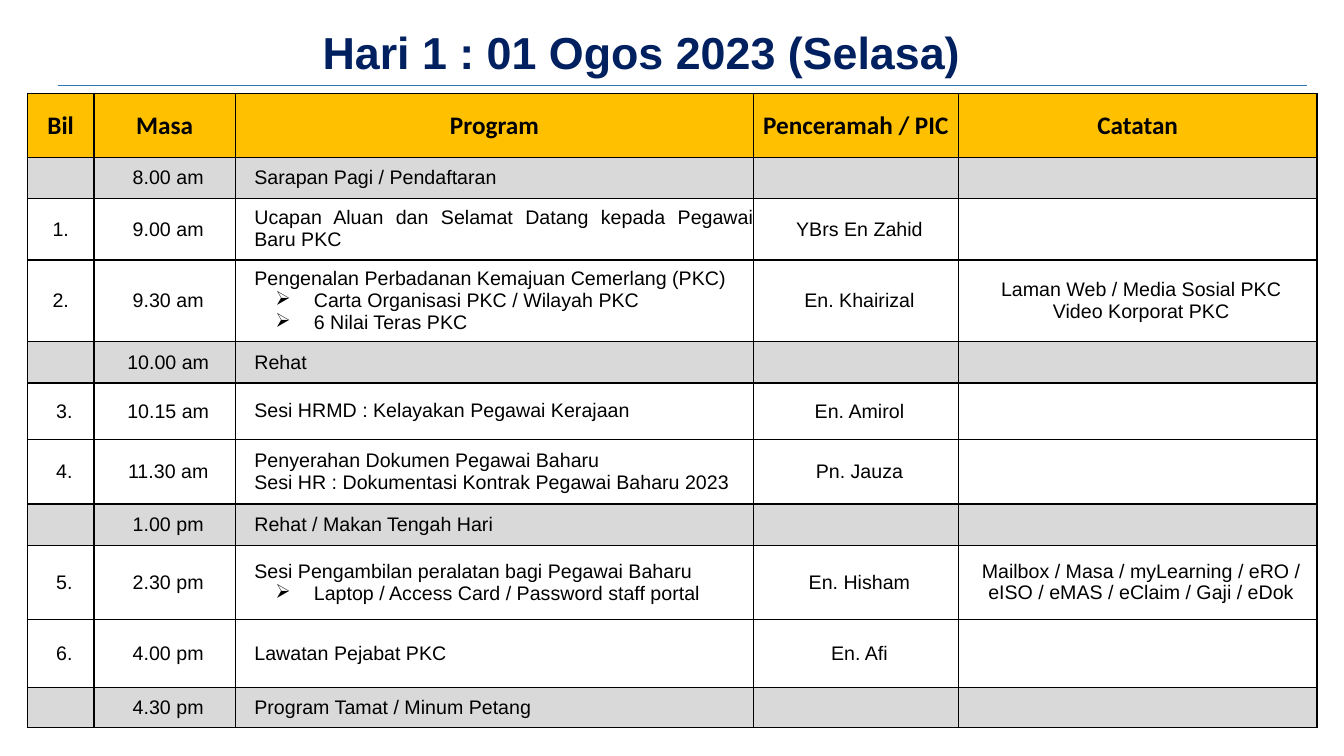
from lxml import etree
from pptx import Presentation
from pptx.dml.color import RGBColor
from pptx.enum.shapes import MSO_CONNECTOR
from pptx.enum.text import MSO_ANCHOR, PP_ALIGN
from pptx.oxml.ns import qn
from pptx.util import Cm, Pt

CENTER, LEFT, JUSTIFY = PP_ALIGN.CENTER, PP_ALIGN.LEFT, PP_ALIGN.JUSTIFY
MIDDLE = MSO_ANCHOR.MIDDLE
STRAIGHT = MSO_CONNECTOR.STRAIGHT

BULLET = "➢"
PROGRAM, NOTES = 2, 4
COLUMN_WIDTHS = [1.68, 3.56, 13.06, 5.16, 9.04]
HEADINGS = ["Bil", "Masa", "Program", "Penceramah / PIC", "Catatan"]

# Row height, then one text per column; a newline starts a paragraph
SCHEDULE = [
    (1.04, "", "8.00 am", "Sarapan Pagi / Pendaftaran", "", ""),
    (1.55, "1.", "9.00 am", "Ucapan Aluan dan Selamat Datang kepada Pegawai Baru PKC",
     "YBrs En Zahid", ""),
    (2.06, "2.", "9.30 am",
     "Pengenalan Perbadanan Kemajuan Cemerlang (PKC)\n"
     "➢Carta Organisasi PKC / Wilayah PKC\n➢6 Nilai Teras PKC",
     "En. Khairizal", "Laman Web / Media Sosial PKC\nVideo Korporat PKC"),
    (1.04, "", "10.00 am", "Rehat", "", ""),
    (1.42, "3.", "10.15 am", "Sesi HRMD : Kelayakan Pegawai Kerajaan", "En. Amirol", ""),
    (1.63, "4.", "11.30 am",
     "Penyerahan Dokumen Pegawai Baharu\n"
     "Sesi HR : Dokumentasi Kontrak Pegawai Baharu 2023", "Pn. Jauza", ""),
    (1.04, "", "1.00 pm", "Rehat / Makan Tengah Hari", "", ""),
    (1.88, "5.", "2.30 pm",
     "Sesi Pengambilan peralatan bagi Pegawai Baharu\n"
     "➢Laptop / Access Card / Password staff portal", "En. Hisham",
     "Mailbox / Masa / myLearning / eRO / eISO / eMAS / eClaim / Gaji / eDok"),
    (1.7, "6.", "4.00 pm", "Lawatan Pejabat PKC", "En. Afi", ""),
    (1.02, "", "4.30 pm", "Program Tamat / Minum Petang", "", ""),
]
JUSTIFIED_ROWS = {1, 2, 4, 6}


def color(value):
    return RGBColor.from_string(value)


def style_cell(cell, fill, side_margin):
    cell.fill.solid()
    cell.fill.fore_color.rgb = color(fill)
    cell.vertical_anchor = MIDDLE
    cell.margin_left = cell.margin_right = Cm(side_margin)
    cell.margin_top = cell.margin_bottom = 0
    properties = cell._tc.get_or_add_tcPr()
    for position, side in enumerate(("a:lnL", "a:lnR", "a:lnT", "a:lnB")):
        border = etree.Element(qn(side), w=str(Pt(1)))
        solid = etree.SubElement(border, qn("a:solidFill"))
        etree.SubElement(solid, qn("a:srgbClr"), val="000000")
        properties.insert(position, border)


deck = Presentation()
deck.slide_width, deck.slide_height = Cm(33.87), Cm(19.05)
page = deck.slides.add_slide(deck.slide_layouts[5])

# Title
title = page.shapes.title
title.left, title.top, title.width, title.height = Cm(4.83), Cm(0.61), Cm(22.68), Cm(1.37)
frame = title.text_frame
frame.text = "Hari 1 : 01 Ogos 2023 (Selasa)"
frame.vertical_anchor = MIDDLE
frame.margin_top = frame.margin_bottom = 0
frame.paragraphs[0].alignment = CENTER
font = frame.paragraphs[0].runs[0].font
font.name, font.size, font.bold = "Arial", Pt(32), True
font.color.rgb = color("002060")

# Rule under the title
rule = page.shapes.add_connector(STRAIGHT, Cm(1.45), Cm(2.16), Cm(32.94), Cm(2.16))
rule.line.color.rgb = color("2E75B6")
rule.line.width = Pt(0.5)
etree.SubElement(rule._element.spPr, qn("a:effectLst"))

# Table grid
heights = [1.6] + [row[0] for row in SCHEDULE]
table = page.shapes.add_table(len(heights), len(COLUMN_WIDTHS), Cm(0.69), Cm(2.36),
                              Cm(sum(COLUMN_WIDTHS)), Cm(sum(heights))).table
table.horz_banding = False
for column, width in zip(table.columns, COLUMN_WIDTHS):
    column.width = Cm(width)
for row, height in zip(table.rows, heights):
    row.height = Cm(height)

# Header row
for cell, heading in zip(table.rows[0].cells, HEADINGS):
    style_cell(cell, "FFC000", 0.18)
    cell.text = heading
    para = cell.text_frame.paragraphs[0]
    para.alignment = CENTER
    font = para.runs[0].font
    font.name, font.size, font.bold = "Calibri", Pt(18), True
    font.color.rgb = color("000000")

# Sessions are numbered on white; breaks have no number and a grey band
for row_index, (height, *texts) in enumerate(SCHEDULE, start=1):
    fill = "FFFFFF" if texts[0] else "D9D9D9"
    for column_index, text in enumerate(texts):
        cell = table.cell(row_index, column_index)
        style_cell(cell, fill, 0)
        if not text:
            continue
        cell.text = text.replace(BULLET, "")
        lines = text.split("\n")
        for para, line in zip(cell.text_frame.paragraphs, lines):
            font = para.runs[0].font
            font.name, font.size, font.bold = "Arial", Pt(14), False
            font.color.rgb = color("000000")
            layout = para._p.get_or_add_pPr()
            if column_index == PROGRAM:
                para.alignment = JUSTIFY if row_index in JUSTIFIED_ROWS else LEFT
                layout.set("marL", str(Cm(0.48)))
            else:
                para.alignment = CENTER
                indent = 0 if texts[0] in ("1.", "2.") and column_index == 0 else 0.18
                layout.set("marL", str(Cm(indent)))
                if column_index != NOTES:
                    para.line_spacing = Pt(15.9)
                elif len(lines) == 1:
                    para.line_spacing = Pt(15)
            if line.startswith(BULLET):
                layout.set("marL", str(Cm(1.98)))
                layout.set("indent", str(Cm(-0.97)))
                etree.SubElement(layout, qn("a:buChar"), char=BULLET)

deck.save("out.pptx")
